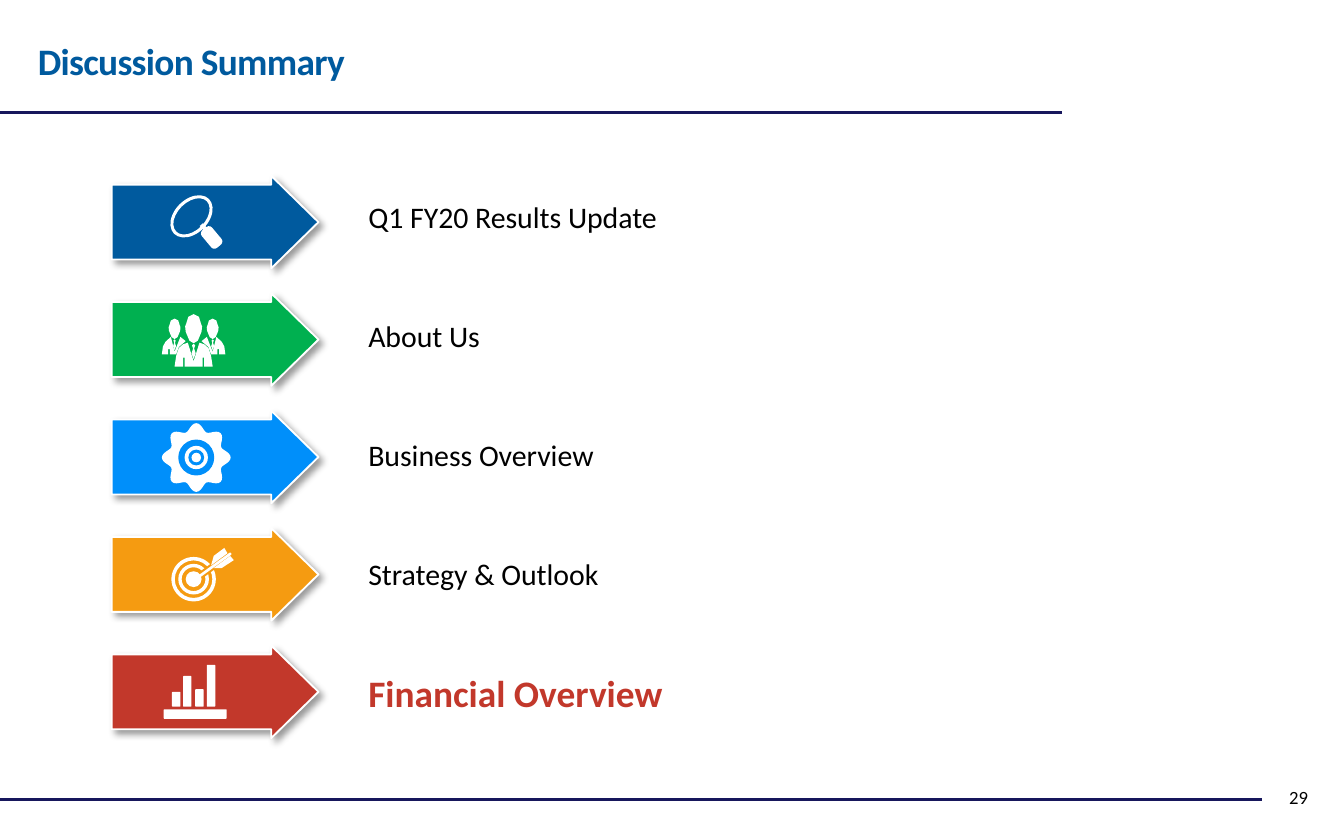
from math import cos, pi, sin

from lxml.etree import SubElement
from pptx import Presentation
from pptx.dml.color import RGBColor
from pptx.enum.shapes import MSO_CONNECTOR, MSO_SHAPE
from pptx.enum.text import MSO_ANCHOR, PP_ALIGN
from pptx.oxml.ns import qn
from pptx.util import Cm, Pt

# Content
TITLE = "Discussion Summary"
PAGE_NUMBER = "29"
WHITE, BLACK, NAVY = "FFFFFF", "000000", "17175C"
BLUE, RED = "005A9E", "C2382B"
TOPICS = [
    {"text": "Q1 FY20 Results Update", "fill": BLUE},
    {"text": "About Us", "fill": "00B050"},
    {"text": "Business Overview", "fill": "008FFA"},
    {"text": "Strategy & Outlook", "fill": "F59B11"},
    {"text": "Financial Overview", "fill": RED, "size": 20, "color": RED, "bold": True},
]
RULES = [(0, 20.07, 2.13), (0, 23.85, 15.11)]  # left, right, height on page in cm

# Layout in cm
ARROW_LEFT, ARROW_WIDTH, ARROW_HEIGHT = 2.11, 3.91, 1.75
FIRST_CENTER, ARROW_PITCH, ICON_CENTER = 4.2, 2.22, 3.66
TABLE_LEFT, TABLE_TOP, TABLE_WIDTH, ROW_HEIGHT = 6.76, 3, 7.44, 2.25

# Icon outlines in hundredths of a cm from the icon centre; half outlines are mirrored
HEAD_HALF = [(0, -48), (10, -43), (14, -30), (16, -25), (15, -15), (13, -10), (8, 2), (0, 7)]
BODY_HALF = [(0, 41), (11, 6), (20, 9), (28, 16), (33, 31), (36, 51),
             (20, 51), (20, 34), (17, 34), (17, 51)]
TIE_HALF = [(0, 8), (3, 11), (1, 17), (4, 26), (0, 37)]
SIDE_BODY = [(-36, 23), (-43, -5), (-53, 4), (-58, 13), (-60, 28), (-48, 28), (-48, 18),
             (-45, 18), (-45, 28), (-33, 28), (-28, 14), (-15, 3), (-25, -5)]
FEATHERS = [
    [(69, -35), (76, -27), (53, -12), (38, -12)],
    [(58, -50), (64, -40), (33, -17), (38, -35)],
]
BARS = [(-41, 28), (-20, 58), (3, 33), (25, 79)]  # left, height


def rgb(value):
    return RGBColor.from_string(value)


def write(frame, text, size=16, color=BLACK, bold=False, align=PP_ALIGN.LEFT, spacing=None):
    para = frame.paragraphs[0]
    para.alignment = align
    span = para.add_run()
    span.text = text
    span.font.name, span.font.size, span.font.bold = "Calibri", Pt(size), bold
    span.font.color.rgb = rgb(color)
    if spacing:
        span.font._element.set("spc", str(spacing))


def paint(shape, color):
    shape.shadow.inherit = False
    shape.fill.solid()
    shape.fill.fore_color.rgb = rgb(color)
    shape.line.fill.background()
    return shape


def add_rule(page, left, right, top):
    rule = page.shapes.add_connector(MSO_CONNECTOR.STRAIGHT, Cm(left), Cm(top), Cm(right), Cm(top))
    rule.line.color.rgb = rgb(NAVY)
    rule.line.width = Pt(1.75)
    SubElement(rule._element.spPr, qn("a:effectLst"))


def add_arrow(page, middle, color):
    arrow = page.shapes.add_shape(MSO_SHAPE.RIGHT_ARROW, Cm(ARROW_LEFT),
                                  Cm(middle - ARROW_HEIGHT / 2), Cm(ARROW_WIDTH), Cm(ARROW_HEIGHT))
    paint(arrow, color)
    arrow.adjustments[0], arrow.adjustments[1] = 0.81, 0.51
    arrow.line.color.rgb = rgb(WHITE)
    arrow.line.width = Pt(1)
    effects = arrow._element.spPr.find(qn("a:effectLst"))
    shadow = SubElement(effects, qn("a:outerShdw"), blurRad=str(Pt(4)), dist=str(Pt(3)),
                        dir="2700000", algn="tl", rotWithShape="0")
    tint = SubElement(shadow, qn("a:srgbClr"), val=BLACK)
    SubElement(tint, qn("a:alpha"), val="40000")


class Icon:
    """Draws parts around one centre, in hundredths of a cm."""

    def __init__(self, page, middle, accent):
        self.page, self.middle, self.accent = page, middle, accent

    def preset(self, kind, x, y, width, height, color=WHITE, turn=0, adjust=None):
        part = self.page.shapes.add_shape(
            kind, Cm(ICON_CENTER + (x - width / 2) / 100), Cm(self.middle + (y - height / 2) / 100),
            Cm(width / 100), Cm(height / 100))
        part.rotation = turn
        if adjust is not None:
            part.adjustments[0] = adjust
        paint(part, color)

    def outline(self, points, color=WHITE):
        spots = [((ICON_CENTER + x / 100) * 1000, (self.middle + y / 100) * 1000) for x, y in points]
        builder = self.page.shapes.build_freeform(*spots[0], scale=Cm(0.001))
        builder.add_line_segments(spots[1:], close=True)
        paint(builder.convert_to_shape(), color)

    def mirrored(self, half, x=0, y=0, scale=1):
        full = half + [(-across, down) for across, down in reversed(half)]
        self.outline([(x + across * scale, y + down * scale) for across, down in full])

    def disc(self, x, y, radius, color=WHITE):
        self.preset(MSO_SHAPE.OVAL, x, y, 2 * radius, 2 * radius, color)


def draw_magnifier(icon):
    icon.preset(MSO_SHAPE.DONUT, -4, -11, 93, 64, turn=315, adjust=0.09)
    icon.preset(MSO_SHAPE.RECTANGLE, 19, 10, 14, 8, turn=50)
    icon.preset(MSO_SHAPE.ROUNDED_RECTANGLE, 34, 29, 43, 25, turn=50, adjust=0.3)


def draw_people(icon):
    for side in (-1, 1):
        icon.outline([(-side * x, y) for x, y in SIDE_BODY])
        for half in (HEAD_HALF, TIE_HALF):
            icon.mirrored(half, x=36 * side, y=-6, scale=0.7)
    for half in (HEAD_HALF, BODY_HALF, TIE_HALF):
        icon.mirrored(half)


def draw_gear(icon):
    rim = []
    for step in range(96):
        angle = 2 * pi * step / 96
        radius = 58 + 7 * cos(8 * angle)
        rim.append((5 + radius * cos(angle), 1 + radius * sin(angle)))
    icon.outline(rim)
    for radius, color in ((34, icon.accent), (22, WHITE), (15, icon.accent), (9, WHITE)):
        icon.disc(5, 1, radius, color)


def draw_target(icon):
    for radius in (42, 29):
        icon.preset(MSO_SHAPE.DONUT, 0, 9, 2 * radius, 2 * radius, adjust=3.25 / radius)
    icon.preset(MSO_SHAPE.RECTANGLE, 39, -17, 79, 13, icon.accent, turn=324)
    icon.disc(0, 9, 15)
    for feather in FEATHERS:
        icon.outline(feather)
    icon.preset(MSO_SHAPE.ROUNDED_RECTANGLE, 39, -17, 79, 5, turn=324, adjust=0.5)


def draw_bars(icon):
    icon.preset(MSO_SHAPE.ROUNDED_RECTANGLE, 3, 42, 119, 18, adjust=0.08)
    for left, height in BARS:
        icon.preset(MSO_SHAPE.ROUNDED_RECTANGLE, left + 8, 28 - height / 2, 16, height, adjust=0.1)


def main():
    deck = Presentation()
    deck.slide_width, deck.slide_height = Cm(25.4), Cm(15.88)
    page = deck.slides.add_slide(deck.slide_layouts[5])

    # Rules, title and page number
    for rule in RULES:
        add_rule(page, *rule)
    title = page.shapes.title
    title.left, title.top, title.width, title.height = Cm(0.46), Cm(0.59), Cm(21.2), Cm(1.12)
    title.text_frame.vertical_anchor = MSO_ANCHOR.MIDDLE
    write(title.text_frame, TITLE, size=20, color=BLUE, bold=True, spacing=-40)
    number = page.shapes.add_textbox(Cm(19.69), Cm(14.53), Cm(5.28), Cm(1.07)).text_frame
    number.word_wrap = True
    number.vertical_anchor = MSO_ANCHOR.MIDDLE
    write(number, PAGE_NUMBER, size=10, align=PP_ALIGN.RIGHT)

    # Topic table
    table = page.shapes.add_table(len(TOPICS), 1, Cm(TABLE_LEFT), Cm(TABLE_TOP), Cm(TABLE_WIDTH),
                                  Cm(ROW_HEIGHT * len(TOPICS))).table
    table.first_row = table.horz_banding = False
    for row, topic in enumerate(TOPICS):
        cell = table.cell(row, 0)
        cell.fill.solid()
        cell.fill.fore_color.rgb = rgb(WHITE)
        cell.vertical_anchor = MSO_ANCHOR.MIDDLE
        cell.margin_left = cell.margin_right = Cm(0.2)
        cell.margin_top = cell.margin_bottom = Cm(0.1)
        style = {key: topic[key] for key in ("size", "color", "bold") if key in topic}
        write(cell.text_frame, topic["text"], **style)

    # Arrows with icons
    drawings = [draw_magnifier, draw_people, draw_gear, draw_target, draw_bars]
    for row, (topic, draw) in enumerate(zip(TOPICS, drawings)):
        middle = FIRST_CENTER + row * ARROW_PITCH
        add_arrow(page, middle, topic["fill"])
        draw(Icon(page, middle, topic["fill"]))

    deck.save("out.pptx")


if __name__ == "__main__":
    main()
